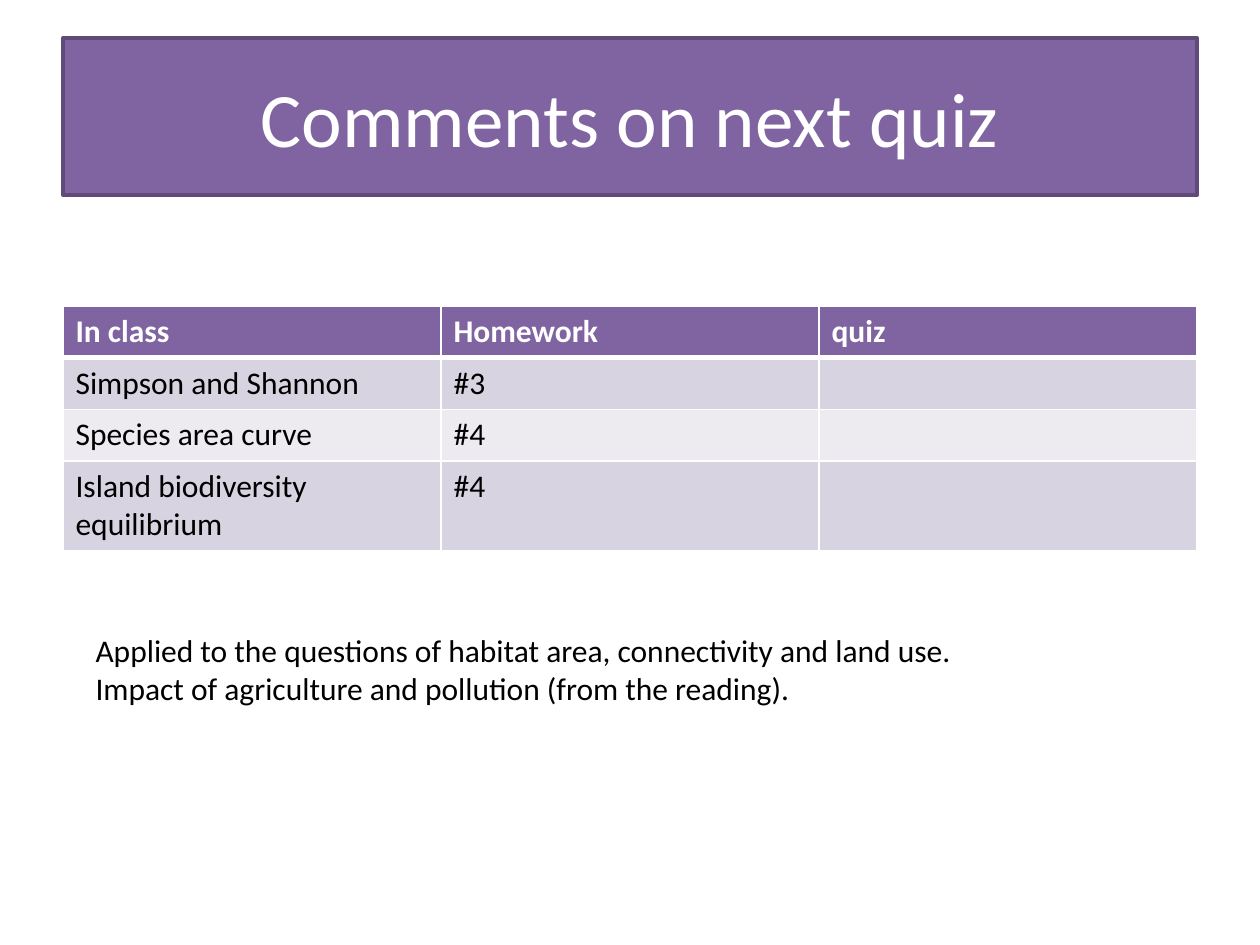
from dataclasses import dataclass

from lxml.etree import SubElement
from pptx import Presentation
from pptx.dml.color import RGBColor
from pptx.enum.text import MSO_ANCHOR, MSO_AUTO_SIZE, PP_ALIGN
from pptx.oxml.ns import qn
from pptx.util import Inches, Pt


@dataclass(frozen=True)
class Theme:
    font: str = "Calibri"
    title_size: int = 44
    body_size: int = 18
    accent: str = "8064A2"
    accent_dark: str = "5F4A78"
    band_dark: str = "D8D3E0"
    band_light: str = "EDEAF0"
    light: str = "FFFFFF"
    dark: str = "000000"


class SlideBuilder:
    """Places elements by inch grid: columns across 10, rows down 7.5."""

    def __init__(self, prs, theme):
        self.theme = theme
        self.s = prs.slides.add_slide(prs.slide_layouts[5])

    def box(self, col, row, cols, rows):
        return [Inches(v) for v in (col, row, cols, rows)]

    def fill(self, target, color):
        target.fill.solid()
        target.fill.fore_color.rgb = RGBColor.from_string(color)

    def run(self, p, text, size, color, bold=False):
        r = p.add_run()
        r.text = text
        r.font.name = self.theme.font
        r.font.size = Pt(size)
        r.font.bold = bold
        r.font.color.rgb = RGBColor.from_string(color)

    def title(self, text, *area):
        sp = self.s.shapes.title
        sp.left, sp.top, sp.width, sp.height = self.box(*area)
        self.fill(sp, self.theme.accent)
        sp.line.color.rgb = RGBColor.from_string(self.theme.accent_dark)
        sp.line.width = Pt(2)
        tf = sp.text_frame
        tf.vertical_anchor = MSO_ANCHOR.MIDDLE
        p = tf.paragraphs[0]
        p.alignment = PP_ALIGN.CENTER
        self.run(p, text, self.theme.title_size, self.theme.light)

    def borders(self, cell, widths):
        """Draw cell edges; widths maps L, R, T and B to points."""
        tc_pr = cell._tc.get_or_add_tcPr()
        for side, width in widths.items():
            ln = SubElement(tc_pr, qn(f"a:ln{side}"), w=str(Pt(width)))
            solid = SubElement(ln, qn("a:solidFill"))
            SubElement(solid, qn("a:srgbClr"), val=self.theme.light)

    def table(self, rows, heights, *area):
        t = self.theme
        shape = (len(rows), len(rows[0]))
        table = self.s.shapes.add_table(*shape, *self.box(*area)).table
        for i, (values, height) in enumerate(zip(rows, heights)):
            table.rows[i].height = Inches(height)
            header = i == 0
            band = t.accent if header else t.band_dark if i % 2 else t.band_light
            edges = {"L": 1, "R": 1, "T": 3 if i == 1 else 1, "B": 3 if header else 1}
            for cell, text in zip(table.rows[i].cells, values):
                self.borders(cell, edges)
                self.fill(cell, band)
                if text:
                    color = t.light if header else t.dark
                    self.run(cell.text_frame.paragraphs[0], text, t.body_size, color, header)

    def text(self, lines, *area):
        tf = self.s.shapes.add_textbox(*self.box(*area)).text_frame
        tf.word_wrap = False
        tf.auto_size = MSO_AUTO_SIZE.SHAPE_TO_FIT_TEXT
        for i, line in enumerate(lines):
            p = tf.add_paragraph() if i else tf.paragraphs[0]
            self.run(p, line, self.theme.body_size, self.theme.dark)


def main():
    prs = Presentation()
    prs.slide_width, prs.slide_height = Inches(10), Inches(7.5)
    slide = SlideBuilder(prs, Theme())
    slide.title("Comments on next quiz", 0.5, 0.3, 9, 1.25)
    quiz_plan = [
        ("In class", "Homework", "quiz"),
        ("Simpson and Shannon", "#3", ""),
        ("Species area curve", "#4", ""),
        ("Island biodiversity equilibrium", "#4", ""),
    ]
    slide.table(quiz_plan, (0.41, 0.41, 0.41, 0.7), 0.5, 2.43, 9, 1.93)
    slide.text(
        [
            "Applied to the questions of habitat area, connectivity and land use.",
            "Impact of agriculture and pollution (from the reading).",
        ],
        0.66, 4.96, 7.08, 0.71,
    )
    prs.save("out.pptx")


if __name__ == "__main__":
    main()
